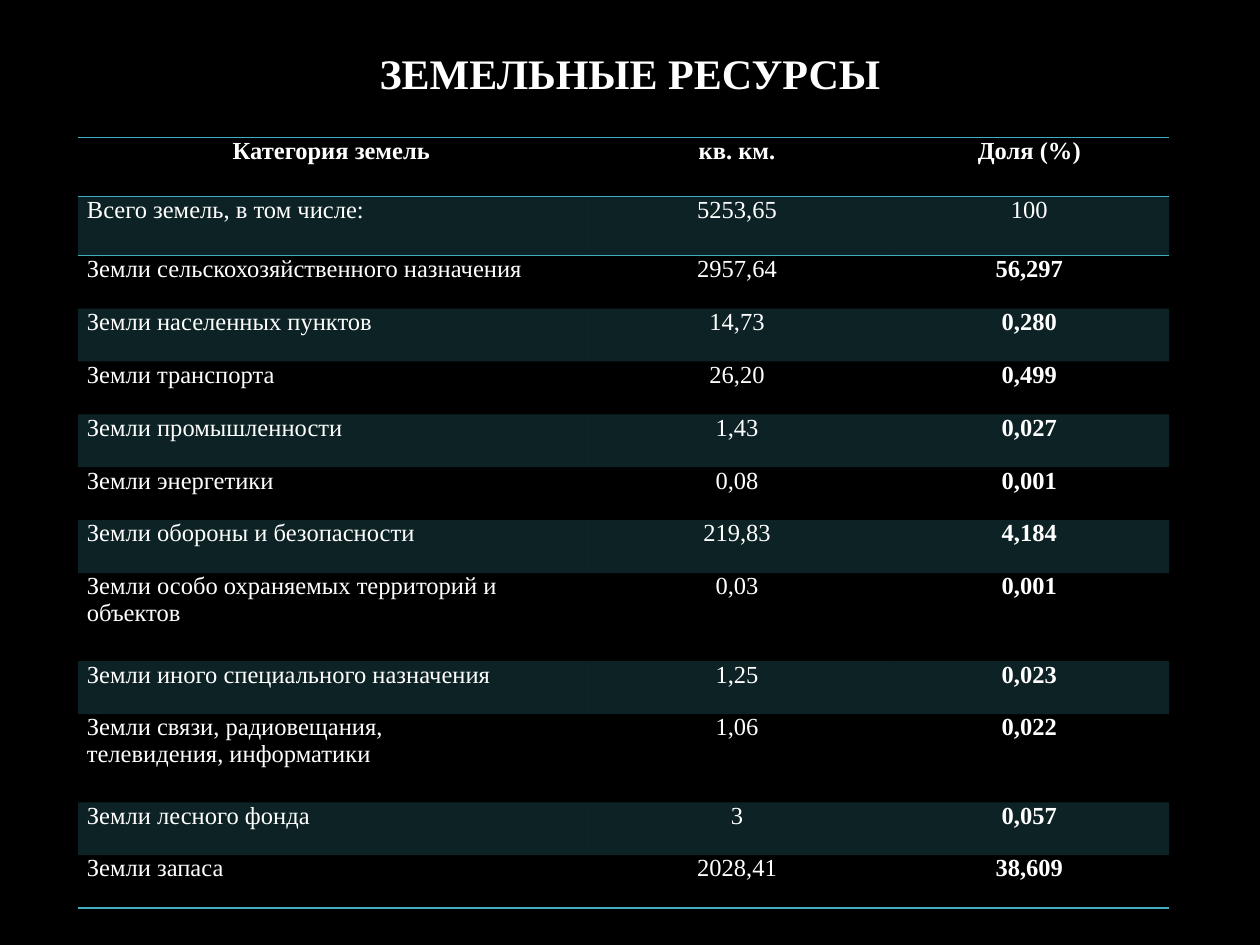
from lxml.etree import SubElement
from pptx import Presentation
from pptx.dml.color import RGBColor
from pptx.enum.text import MSO_ANCHOR, PP_ALIGN
from pptx.oxml import parse_xml
from pptx.oxml.ns import nsdecls, qn
from pptx.util import Inches, Pt

BLACK = RGBColor(0x00, 0x00, 0x00)
WHITE = RGBColor(0xFF, 0xFF, 0xFF)
TEAL = RGBColor(0x41, 0xAE, 0xBD)
FONT = "Times New Roman"
NO_GRID_STYLE = "{2D5ABB26-0587-4C30-8999-92F81FD0307C}"

LAND_ROWS = [
    ("Категория земель", "кв. км.", "Доля (%)"),
    ("Всего земель, в том числе:", "5253,65", "100"),
    ("Земли сельскохозяйственного назначения", "2957,64", "56,297"),
    ("Земли населенных пунктов", "14,73", "0,280"),
    ("Земли транспорта", "26,20", "0,499"),
    ("Земли промышленности", "1,43", "0,027"),
    ("Земли энергетики", "0,08", "0,001"),
    ("Земли обороны и безопасности", "219,83", "4,184"),
    ("Земли особо охраняемых территорий и объектов", "0,03", "0,001"),
    ("Земли иного специального назначения", "1,25", "0,023"),
    ("Земли связи, радиовещания,\nтелевидения, информатики", "1,06", "0,022"),
    ("Земли лесного фонда", "3", "0,057"),
    ("Земли запаса", "2028,41", "38,609"),
]
COLUMN_WIDTHS = [4.02, 2.42, 2.22]
ROW_HEIGHTS = [0.47] * 2 + [0.42] * 6 + [0.7, 0.42, 0.7, 0.42, 0.42]


def style_paragraph(paragraph, size, bold, alignment):
    paragraph.alignment = alignment
    for run in paragraph.runs:
        run.font.name = FONT
        run.font.size = Pt(size)
        run.font.bold = bold
        run.font.color.rgb = WHITE


def add_rules(cell, sides):
    """Draw teal 1 pt borders; sides are "T" and "B", in that order."""
    for position, side in enumerate(sides):
        border = parse_xml(
            f'<a:ln{side} {nsdecls("a")} w="{Pt(1)}"><a:solidFill>'
            f'<a:srgbClr val="{TEAL}"/></a:solidFill></a:ln{side}>'
        )
        cell._tc.get_or_add_tcPr().insert(position, border)


prs = Presentation()
prs.slide_width = Inches(10)
prs.slide_height = Inches(7.5)
slide = prs.slides.add_slide(prs.slide_layouts[6])
slide.background.fill.solid()
slide.background.fill.fore_color.rgb = BLACK

heading = slide.shapes.add_textbox(
    Inches(0), Inches(0.31), Inches(10), Inches(0.58)
).text_frame
heading.word_wrap = True
heading.vertical_anchor = MSO_ANCHOR.MIDDLE
heading.text = "ЗЕМЕЛЬНЫЕ РЕСУРСЫ"
heading.paragraphs[0].line_spacing = 0.9
style_paragraph(heading.paragraphs[0], 24, True, PP_ALIGN.CENTER)

land_table = slide.shapes.add_table(
    len(LAND_ROWS), len(COLUMN_WIDTHS),
    Inches(0.62), Inches(1.09), Inches(sum(COLUMN_WIDTHS)), Inches(sum(ROW_HEIGHTS)),
).table
land_table.horz_banding = False
land_table._tbl.tblPr.find(qn("a:tableStyleId")).text = NO_GRID_STYLE
for column, width in zip(land_table.columns, COLUMN_WIDTHS):
    column.width = Inches(width)
for row, height in zip(land_table.rows, ROW_HEIGHTS):
    row.height = Inches(height)

last_row = len(LAND_ROWS) - 1
rules = {0: "TB", 1: "T", last_row: "B"}
for r, values in enumerate(LAND_ROWS):
    for c, value in enumerate(values):
        cell = land_table.cell(r, c)
        cell.margin_left = cell.margin_right = Inches(0.07)
        cell.margin_top = cell.margin_bottom = 0
        cell.text_frame.text = value
        bold = r == 0 or (c == 2 and r > 1)
        alignment = PP_ALIGN.LEFT if c == 0 and r > 0 else PP_ALIGN.CENTER
        for paragraph in cell.text_frame.paragraphs:
            style_paragraph(paragraph, 14, bold, alignment)
        if r % 2:
            cell.fill.solid()
            cell.fill.fore_color.rgb = TEAL
            band_color = cell._tc.tcPr.find(".//" + qn("a:srgbClr"))
            SubElement(band_color, qn("a:alpha"), val="20000")
        else:
            cell.fill.background()
        add_rules(cell, rules.get(r, ""))

prs.save("out.pptx")
